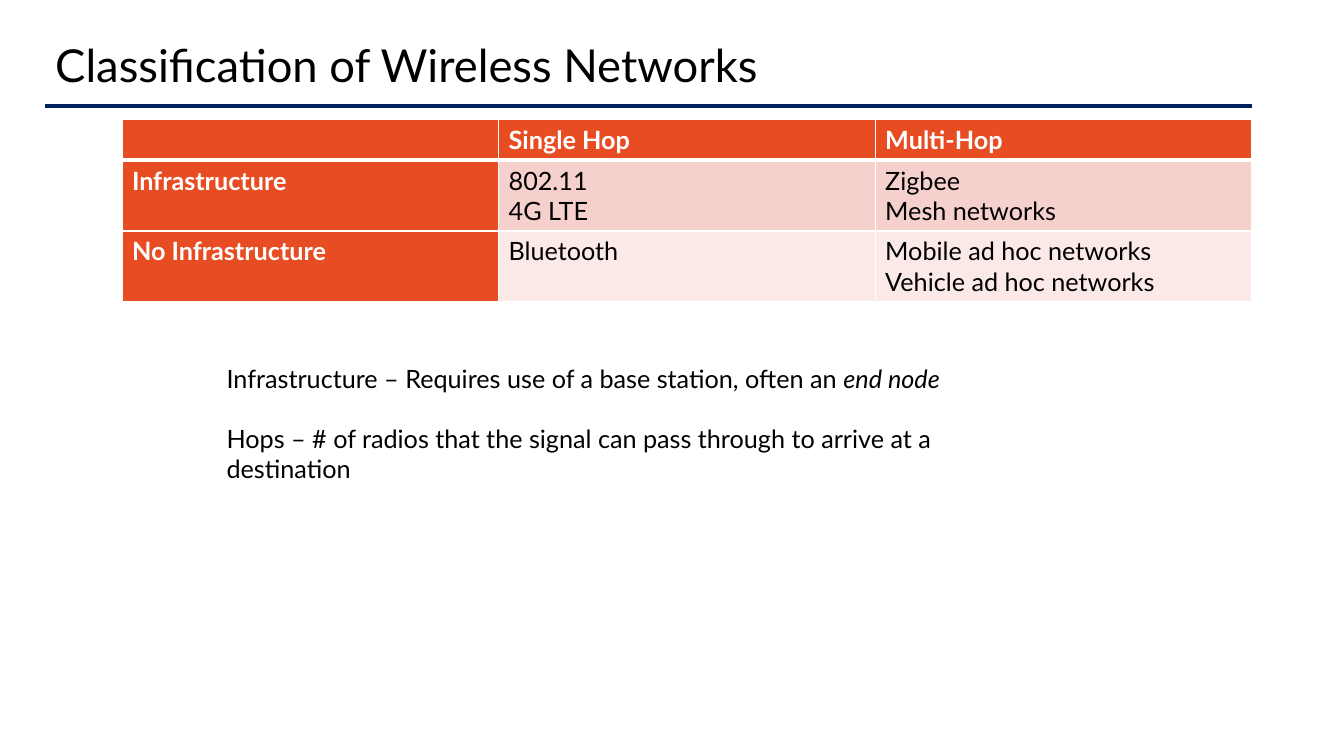
from dataclasses import dataclass

from lxml.etree import SubElement
from pptx import Presentation
from pptx.dml.color import RGBColor
from pptx.enum.shapes import MSO_CONNECTOR
from pptx.enum.text import MSO_ANCHOR
from pptx.oxml.ns import qn
from pptx.slide import Slide
from pptx.table import _Cell
from pptx.text.text import _Paragraph
from pptx.util import Pt


@dataclass(frozen=True)
class Theme:
    font: str = "Lato"
    title_size: float = 32.4
    body_size: float = 18
    text: str = "000000"
    white: str = "FFFFFF"
    rule: str = "002060"
    heading: str = "E84C22"
    bands: tuple[str, ...] = ("F6D0CD", "FBE9E8")


@dataclass(frozen=True)
class Box:
    left: float
    top: float
    width: float
    height: float

    def lengths(self) -> tuple[Pt, Pt, Pt, Pt]:
        return Pt(self.left), Pt(self.top), Pt(self.width), Pt(self.height)


@dataclass(frozen=True)
class TableRow:
    height: float
    cells: tuple[str, ...]


THEME = Theme()
TITLE_BOX = Box(32.4, 28.8, 861.84, 38.9)
RULE_Y = 75.6
TABLE_BOX = Box(87.1, 85.2, 807.1, 130.4)
NOTES_BOX = Box(154.8, 255.6, 597.6, 72.7)
NOTE_GAP = 21.6

NETWORKS = (
    TableRow(29.2, ("", "Single Hop", "Multi-Hop")),
    TableRow(50.6, ("Infrastructure", "802.11\n4G LTE", "Zigbee\nMesh networks")),
    TableRow(50.6, ("No Infrastructure", "Bluetooth",
                    "Mobile ad hoc networks\nVehicle ad hoc networks")),
)
# Each note is plain text followed by an italic ending.
NOTES = (
    ("Infrastructure – Requires use of a base station, often an ", "end node"),
    ("Hops – # of radios that the signal can pass through to arrive at a destination", ""),
)


def style(p: _Paragraph, size: float, color: str, bold: bool = False) -> None:
    p.font.name = THEME.font
    p.font.size = Pt(size)
    p.font.bold = bold
    p.font.color.rgb = RGBColor.from_string(color)


def add_title(slide: Slide, text: str) -> None:
    tf = slide.shapes.add_textbox(*TITLE_BOX.lengths()).text_frame
    tf.word_wrap = True
    tf.vertical_anchor = MSO_ANCHOR.MIDDLE
    p = tf.paragraphs[0]
    p.text = text
    p.line_spacing = 0.9
    style(p, THEME.title_size, THEME.text)


def add_rule(slide: Slide) -> None:
    right = TITLE_BOX.left + TITLE_BOX.width
    line = slide.shapes.add_connector(
        MSO_CONNECTOR.STRAIGHT, Pt(TITLE_BOX.left), Pt(RULE_Y), Pt(right), Pt(RULE_Y))
    line.line.color.rgb = RGBColor.from_string(THEME.rule)
    line.line.width = Pt(2.5)
    SubElement(line._element.spPr, qn("a:effectLst"))


def set_borders(cell: _Cell, top: float, bottom: float) -> None:
    tc_pr = cell._tc.get_or_add_tcPr()
    for side, width in (("L", 1), ("R", 1), ("T", top), ("B", bottom)):
        ln = SubElement(tc_pr, qn(f"a:ln{side}"), w=str(Pt(width)))
        fill = SubElement(ln, qn("a:solidFill"))
        SubElement(fill, qn("a:srgbClr"), val=THEME.white)


def add_network_table(slide: Slide) -> None:
    columns = len(NETWORKS[0].cells)
    table = slide.shapes.add_table(len(NETWORKS), columns, *TABLE_BOX.lengths()).table
    for column in table.columns:
        column.width = Pt(TABLE_BOX.width / columns)
    for i, row in enumerate(NETWORKS):
        table.rows[i].height = Pt(row.height)
        for j, text in enumerate(row.cells):
            cell = table.cell(i, j)
            is_heading = i == 0 or j == 0
            set_borders(cell, top=3 if i == 1 else 1, bottom=3 if i == 0 else 1)
            cell.fill.solid()
            cell.fill.fore_color.rgb = RGBColor.from_string(
                THEME.heading if is_heading else THEME.bands[i - 1])
            cell.text = text
            for p in cell.text_frame.paragraphs:
                style(p, THEME.body_size, THEME.white if is_heading else THEME.text, is_heading)


def add_notes(slide: Slide) -> None:
    tf = slide.shapes.add_textbox(*NOTES_BOX.lengths()).text_frame
    tf.word_wrap = True
    for i, (plain, italic) in enumerate(NOTES):
        p = tf.add_paragraph() if i else tf.paragraphs[0]
        if i:
            p.space_before = Pt(NOTE_GAP)
        p.add_run().text = plain
        if italic:
            r = p.add_run()
            r.text = italic
            r.font.italic = True
        style(p, THEME.body_size, THEME.text)


def main() -> None:
    prs = Presentation()
    prs.slide_width, prs.slide_height = Pt(960), Pt(540)
    slide = prs.slides.add_slide(prs.slide_layouts[6])
    add_rule(slide)
    add_title(slide, "Classification of Wireless Networks")
    add_network_table(slide)
    add_notes(slide)
    prs.save("out.pptx")


if __name__ == "__main__":
    main()
